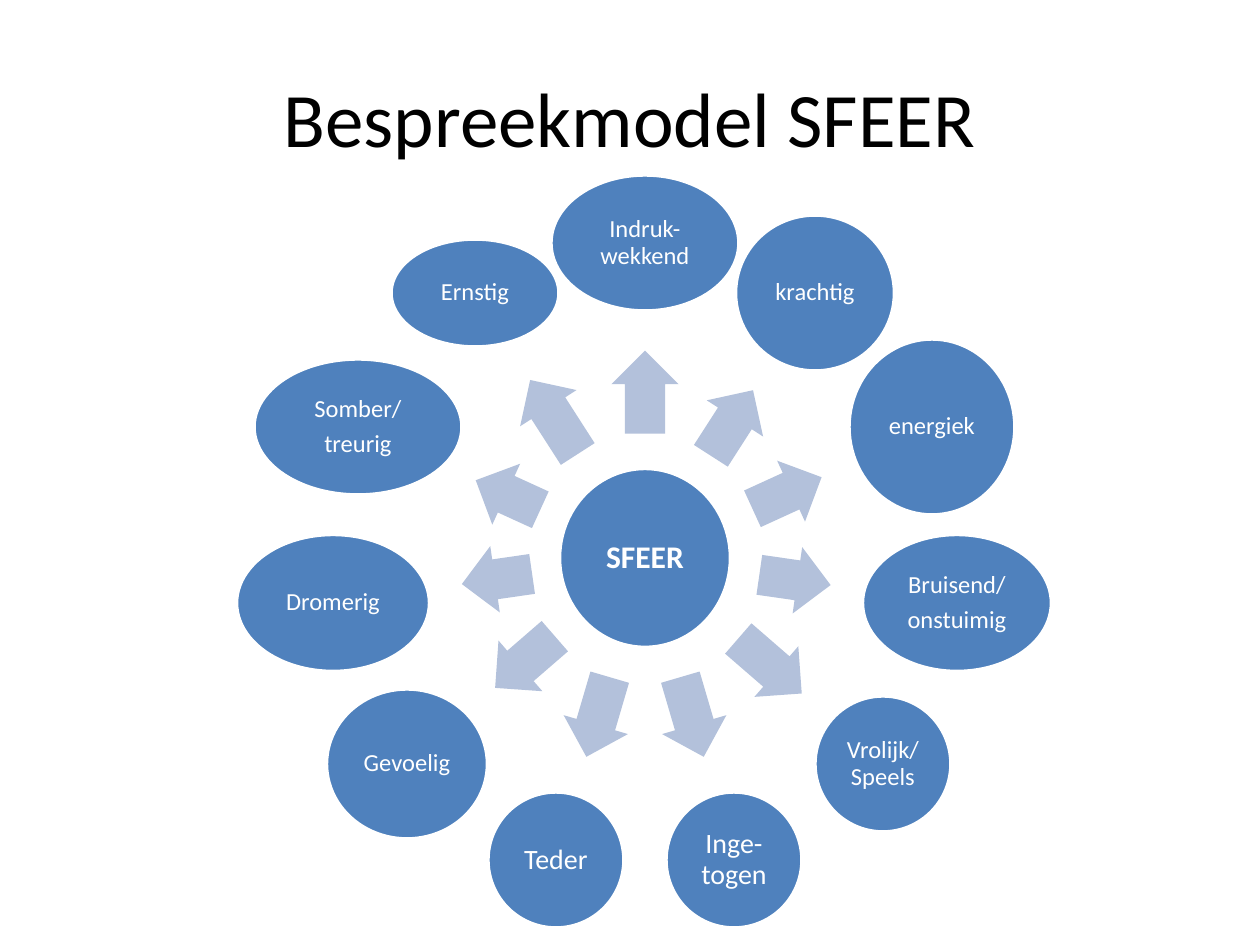
import math

import pptx
import pptx.dml.color
import pptx.enum.shapes
import pptx.enum.text
import pptx.util

RGBColor = pptx.dml.color.RGBColor
BLUE = RGBColor(0x4F, 0x81, 0xBD)
PALE_BLUE = RGBColor(0xB3, 0xC1, 0xDB)
WHITE = RGBColor(0xFF, 0xFF, 0xFF)
BLACK = RGBColor(0x00, 0x00, 0x00)

SHAPES = pptx.enum.shapes.MSO_SHAPE
EMU_PER_PX = 914400 / 126

HUB_X, HUB_Y = 645, 558
RING_RADIUS = 315
ARROW_WIDTH = 67

# Clockwise from the top: lines, text size, ellipse width and height,
# arrow distance from the hub, arrow length
MOODS = [
    (["Indruk-wekkend"], 14, 188, 136, 166, 83),
    (["krachtig"], 14, 159, 156, 160, 78),
    (["energiek"], 14, 166, 176, 156, 76),
    (["Bruisend/", "onstuimig"], 14, 189, 137, 152, 72),
    (["Vrolijk/ Speels"], 14, 136, 136, 165, 84),
    (["Inge-togen"], 16, 136, 136, 166, 83),
    (["Teder"], 16, 136, 136, 166, 83),
    (["Gevoelig"], 14, 161, 150, 159, 79),
    (["Dromerig"], 14, 193, 137, 150, 71),
    (["Somber/", "treurig"], 14, 208, 136, 151, 71),
    (["Ernstig"], 14, 168, 108, 168, 88),
]


def px(length):
    return pptx.util.Emu(round(length * EMU_PER_PX))


def around_hub(angle, radius):
    turn = math.radians(angle)
    return (round(HUB_X + radius * math.cos(turn)),
            round(HUB_Y + radius * math.sin(turn)))


class Painter:
    font = "Calibri"

    def __init__(self, page):
        self.page = page

    def add_lines(self, box, lines, size, color, bold=False):
        frame = box.text_frame
        frame.word_wrap = True
        frame.vertical_anchor = pptx.enum.text.MSO_ANCHOR.MIDDLE
        for index, line in enumerate(lines):
            para = frame.add_paragraph() if index else frame.paragraphs[0]
            para.alignment = pptx.enum.text.PP_ALIGN.CENTER
            span = para.add_run()
            span.text = line
            span.font.name = self.font
            span.font.size = pptx.util.Pt(size)
            span.font.bold = bold
            span.font.color.rgb = color
        return frame

    def title(self, text, left, top, width, height):
        box = self.page.shapes.add_textbox(px(left), px(top), px(width), px(height))
        self.add_lines(box, [text], 44, BLACK)

    def centred_shape(self, kind, center, width, height, fill):
        x, y = center
        shape = self.page.shapes.add_shape(
            kind, px(x - width / 2), px(y - height / 2), px(width), px(height))
        shape.shadow.inherit = False
        shape.fill.solid()
        shape.fill.fore_color.rgb = fill
        return shape

    def bubble(self, center, width, height, lines, size, inset, bold=False):
        shape = self.centred_shape(SHAPES.OVAL, center, width, height, BLUE)
        shape.line.color.rgb = WHITE
        shape.line.width = pptx.util.Pt(2)
        frame = self.add_lines(shape, lines, size, WHITE, bold)
        frame.margin_left = frame.margin_right = px(inset)
        frame.margin_top = frame.margin_bottom = px(inset)
        for para in frame.paragraphs:
            para.line_spacing = 0.9
            para.space_after = pptx.util.Pt(0.35 * size)

    def arrow(self, center, length, angle):
        shape = self.centred_shape(
            SHAPES.RIGHT_ARROW, center, length, ARROW_WIDTH, PALE_BLUE)
        shape.line.fill.background()
        shape.adjustments[0] = 0.6
        shape.adjustments[1] = 0.5
        shape.rotation = angle % 360


def main():
    deck = pptx.Presentation()
    deck.slide_width, deck.slide_height = px(1260), px(945)
    painter = Painter(deck.slides.add_slide(deck.slide_layouts[6]))

    painter.title("Bespreekmodel SFEER", 63, 38, 1134, 158)

    # Hub
    painter.bubble((HUB_X, HUB_Y), 171, 179, ["SFEER"], 18, 4, bold=True)

    # Ring of moods, each with an arrow from the hub
    for index, (lines, size, width, height, distance, length) in enumerate(MOODS):
        angle = 360 * index / len(MOODS) - 90
        painter.arrow(around_hub(angle, distance), length, angle)
        painter.bubble(around_hub(angle, RING_RADIUS), width, height, lines, size, 3)

    deck.save("out.pptx")


if __name__ == "__main__":
    main()
